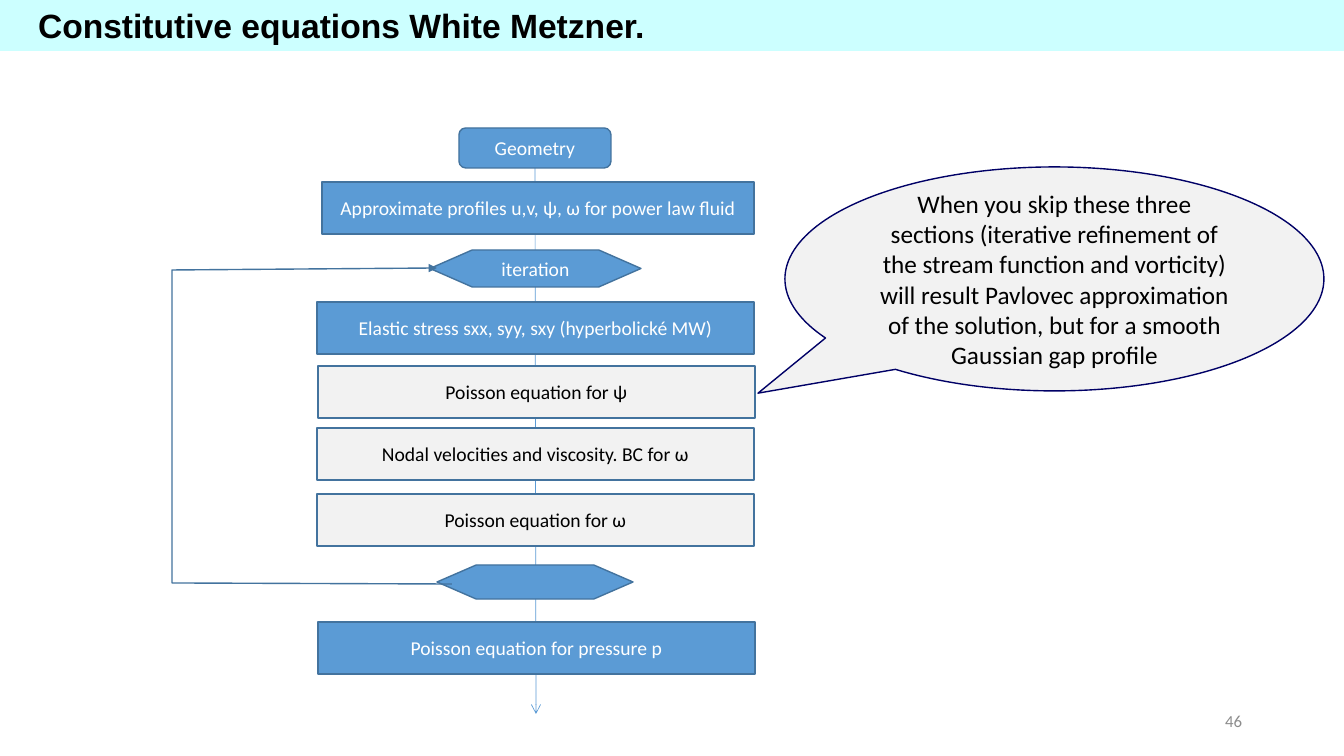
from lxml.etree import SubElement
from pptx import Presentation
from pptx.dml.color import RGBColor
from pptx.enum.shapes import MSO_CONNECTOR, MSO_SHAPE as SHAPE
from pptx.enum.text import MSO_ANCHOR as ANCHOR, PP_ALIGN as ALIGN
from pptx.oxml.ns import qn
from pptx.util import Pt

SLIDE_SIZE = 1344, 756
EMU_PER_PX = 12192000 / 1344

BLACK = RGBColor(0x00, 0x00, 0x00)
WHITE = RGBColor(0xFF, 0xFF, 0xFF)
GREY = RGBColor(0x8C, 0x8C, 0x8C)
PALE = RGBColor(0xF2, 0xF2, 0xF2)
CYAN = RGBColor(0xCC, 0xFF, 0xFF)
BLUE = RGBColor(0x5B, 0x9B, 0xD5)
STEEL = RGBColor(0x43, 0x73, 0x9E)
NAVY = RGBColor(0x00, 0x00, 0x66)


def px(length):
    return round(length * EMU_PER_PX)


class FlowSlide:
    def __init__(self, slide, font="Calibri"):
        self.shapes = slide.shapes
        self.font = font

    def label(self, shape, text, size, color, align=ALIGN.CENTER, font=None, bold=False):
        frame = shape.text_frame
        frame.word_wrap = True
        frame.vertical_anchor = ANCHOR.MIDDLE
        paragraph = frame.paragraphs[0]
        paragraph.text = text
        paragraph.alignment = align
        style = paragraph.font
        style.name, style.size, style.bold = font or self.font, Pt(size), bold
        style.color.rgb = color

    def outline(self, item, color, width, arrow=None):
        item.line.color.rgb = color
        item.line.width = Pt(width)
        if arrow:
            line_xml = item._element.spPr.find(qn("a:ln"))
            SubElement(line_xml, qn("a:tailEnd"), type=arrow)

    def block(self, kind, box, text="", fill=BLUE, edge=STEEL, size=14):
        """Draw a filled preset shape; text is white on blue, otherwise black."""
        shape = self.shapes.add_shape(kind, *map(px, box))
        shape.shadow.inherit = False
        shape.fill.solid()
        shape.fill.fore_color.rgb = fill
        if edge is None:
            shape.line.fill.background()
        else:
            self.outline(shape, edge, 1)
        if text:
            self.label(shape, text, size, WHITE if fill == BLUE else BLACK)
        return shape

    def title(self, text, height, indent):
        band = self.block(SHAPE.RECTANGLE, (0, 0, SLIDE_SIZE[0], height), fill=CYAN, edge=None)
        self.label(band, text, 24, BLACK, ALIGN.LEFT, "Arial", True)
        band.text_frame.margin_left = px(indent)

    def page_number(self, number, box):
        self.label(self.shapes.add_textbox(*map(px, box)), number, 12, GREY, ALIGN.RIGHT)

    def arrow(self, start, end):
        line = self.shapes.add_connector(MSO_CONNECTOR.STRAIGHT, *map(px, start + end))
        self.outline(line, BLUE, 0.5, "arrow")
        SubElement(line._element.spPr, qn("a:effectLst"))
        return line

    def loop(self, start, *points):
        builder = self.shapes.build_freeform(*start, scale=EMU_PER_PX)
        builder.add_line_segments(points, close=False)
        track = builder.convert_to_shape()
        track.shadow.inherit = False
        track.fill.background()
        self.outline(track, STEEL, 1, "triangle")

    def callout(self, box, text, tip):
        """Draw a speech ellipse; tip is the pointer's offset from its centre."""
        bubble = self.block(SHAPE.OVAL_CALLOUT, box, text, PALE, NAVY, 18)
        bubble.adjustments[0], bubble.adjustments[1] = tip


def main():
    deck = Presentation()
    deck.slide_width, deck.slide_height = map(px, SLIDE_SIZE)
    flow = FlowSlide(deck.slides.add_slide(deck.slide_layouts[6]))

    flow.title("Constitutive equations White Metzner.", height=51, indent=38)
    flow.page_number("46", (950, 701, 302, 40))

    spine = flow.arrow((535, 168), (536, 714))
    geometry = flow.block(SHAPE.FLOWCHART_ALTERNATE_PROCESS, (459, 128, 152, 40), "Geometry")
    spine.begin_connect(geometry, 2)

    flow.block(SHAPE.FLOWCHART_PREPARATION, (430, 250, 211, 37), "iteration")
    flow.block(SHAPE.FLOWCHART_PREPARATION, (437, 565, 196, 34))
    flow.loop((452, 584), (172, 583), (172, 270), (437, 268))

    steps = [
        (322, 182, 432, "Approximate profiles u,v, ψ, ω for power law fluid", BLUE),
        (317, 302, 437, "Elastic stress sxx, syy, sxy (hyperbolické MW)", BLUE),
        (318, 366, 437, "Poisson equation for ψ", PALE),
        (317, 428, 437, "Nodal velocities and viscosity. BC for ω", PALE),
        (317, 494, 437, "Poisson equation for ω", PALE),
        (318, 622, 437, "Poisson equation for pressure p", BLUE),
    ]
    for left, top, width, text, fill in steps:
        flow.block(SHAPE.FLOWCHART_PROCESS, (left, top, width, 52), text, fill)

    flow.callout(
        (785, 167, 539, 224),
        "When you skip these three sections (iterative refinement of the stream function "
        "and vorticity) will result Pavlovec approximation of the solution, "
        "but for a smooth Gaussian gap profile",
        tip=(-0.55, 0.51),
    )
    deck.save("out.pptx")


if __name__ == "__main__":
    main()
